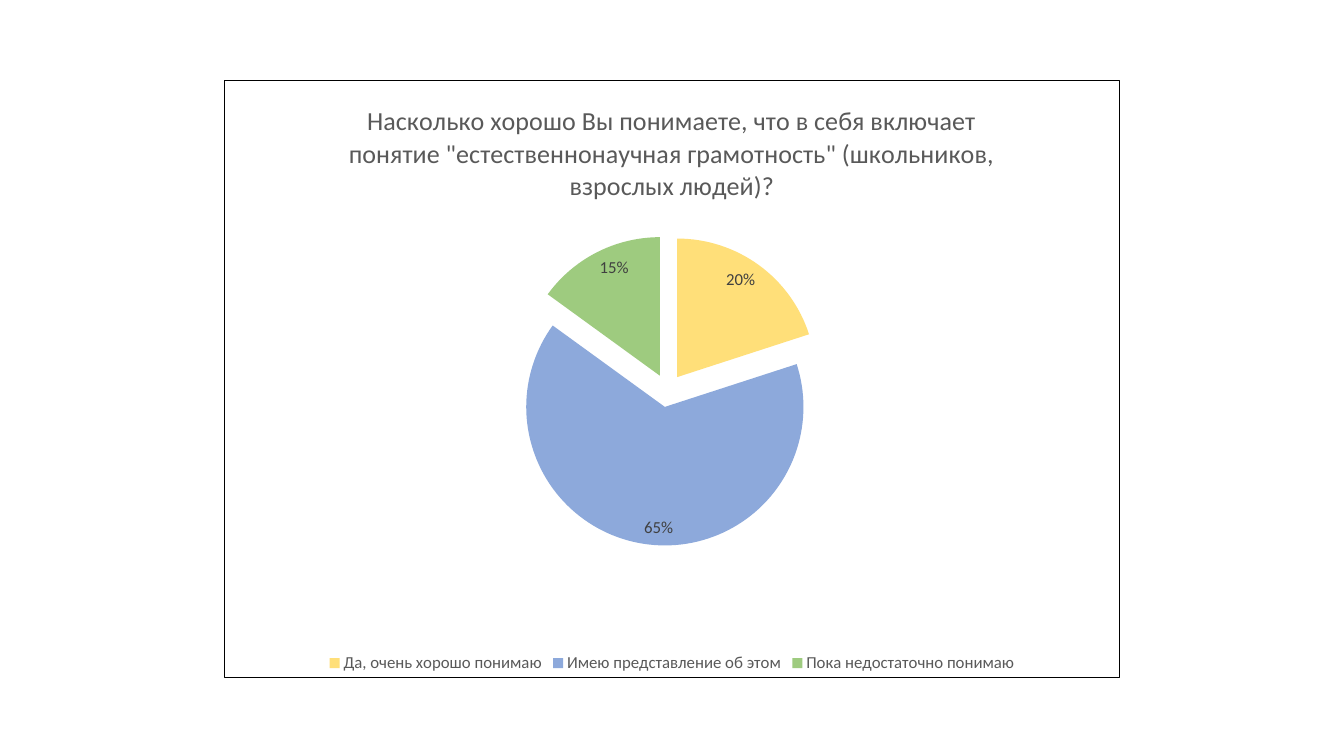
"""Build a slide with a pie chart of survey answers."""
from lxml import etree
from pptx import Presentation
from pptx.chart.data import CategoryChartData
from pptx.dml.color import RGBColor
from pptx.enum.chart import XL_CHART_TYPE, XL_LABEL_POSITION, XL_LEGEND_POSITION
from pptx.oxml import parse_xml
from pptx.oxml.ns import nsdecls, qn
from pptx.util import Pt

PIE = XL_CHART_TYPE.PIE
BOTTOM = XL_LEGEND_POSITION.BOTTOM
INSIDE = XL_LABEL_POSITION.INSIDE_END

BLACK = RGBColor(0x00, 0x00, 0x00)
GREY = RGBColor(0x59, 0x59, 0x59)
DARK = RGBColor(0x40, 0x40, 0x40)
YELLOW = RGBColor(0xFF, 0xDF, 0x79)
BLUE = RGBColor(0x8D, 0xA9, 0xDB)
GREEN = RGBColor(0x9E, 0xCB, 0x7F)

TITLE = ('Насколько хорошо Вы понимаете, что в себя включает понятие '
         '"естественнонаучная грамотность" (школьников, взрослых людей)?')
ANSWERS = [
    ("Да, очень хорошо понимаю", 0.20, YELLOW),
    ("Имею представление об этом", 0.65, BLUE),
    ("Пока недостаточно понимаю", 0.15, GREEN),
]


class Deck:
    def __init__(self, slide, face="Calibri"):
        self.slide = slide
        self.face = face

    def style(self, font, size=12, color=GREY):
        font.name = self.face
        font.size = Pt(size)
        font.bold = False
        font.color.rgb = color

    def text(self, frame, words, **look):
        run = frame.paragraphs[0].add_run()
        run.text = words
        self.style(run.font, **look)

    def pie(self, box, title, answers):
        names, values, colors = zip(*answers)
        data = CategoryChartData(number_format="0%")
        data.categories = names
        data.add_series(title, values)
        chart = self.slide.shapes.add_chart(PIE, *map(Pt, box), data).chart
        self.style(chart.font, size=10, color=BLACK)
        self.text(chart.chart_title.text_frame, title, size=18.6)
        chart.has_legend = True
        chart.legend.position = BOTTOM
        chart.legend.include_in_layout = False
        self.style(chart.legend.font)
        plot = chart.plots[0]
        plot.vary_by_categories = True
        for spot, color in enumerate(colors):
            form = plot.series[0].points[spot].format
            form.fill.solid()
            form.fill.fore_color.rgb = color
            form.line.fill.background()
        plot.has_data_labels = True
        labels = plot.data_labels
        labels.show_value = True
        labels.show_percentage = False
        labels.number_format = "0%"
        labels.number_format_is_linked = False
        labels.position = INSIDE
        self.style(labels.font, color=DARK)
        return chart

    def burst(self, chart, gap):
        point = next(chart.element.iter(qn("c:dPt")))
        node = etree.Element(qn("c:explosion"), val=str(gap))
        point.addprevious(node)

    def place(self, chart, **part):
        area = next(chart.element.iter(qn("c:plotArea")))
        for old in area.findall(qn("c:layout")):
            area.remove(old)
        layout = etree.Element(qn("c:layout"))
        manual = etree.SubElement(layout, qn("c:manualLayout"))
        rules = {"layoutTarget": "inner", "xMode": "edge", "yMode": "edge"}
        for tag, val in {**rules, **part}.items():
            etree.SubElement(manual, qn(f"c:{tag}"), val=str(val))
        area.insert(0, layout)

    def frame(self, chart, color, width):
        chart.element.find(qn("c:chart")).addnext(parse_xml(
            f'<c:spPr {nsdecls("c", "a")}><a:noFill/><a:ln w="{Pt(width)}">'
            f'<a:solidFill><a:srgbClr val="{color}"/></a:solidFill>'
            '</a:ln></c:spPr>'))


def main():
    show = Presentation()
    show.slide_width, show.slide_height = Pt(960), Pt(540)
    deck = Deck(show.slides.add_slide(show.slide_layouts[6]))
    chart = deck.pie((160, 57, 640, 427), TITLE, ANSWERS)
    deck.burst(chart, 12)
    deck.place(chart, x=0.14, y=0.26, w=0.71, h=0.52)
    deck.frame(chart, BLACK, 0.75)
    show.save("out.pptx")


if __name__ == "__main__":
    main()
